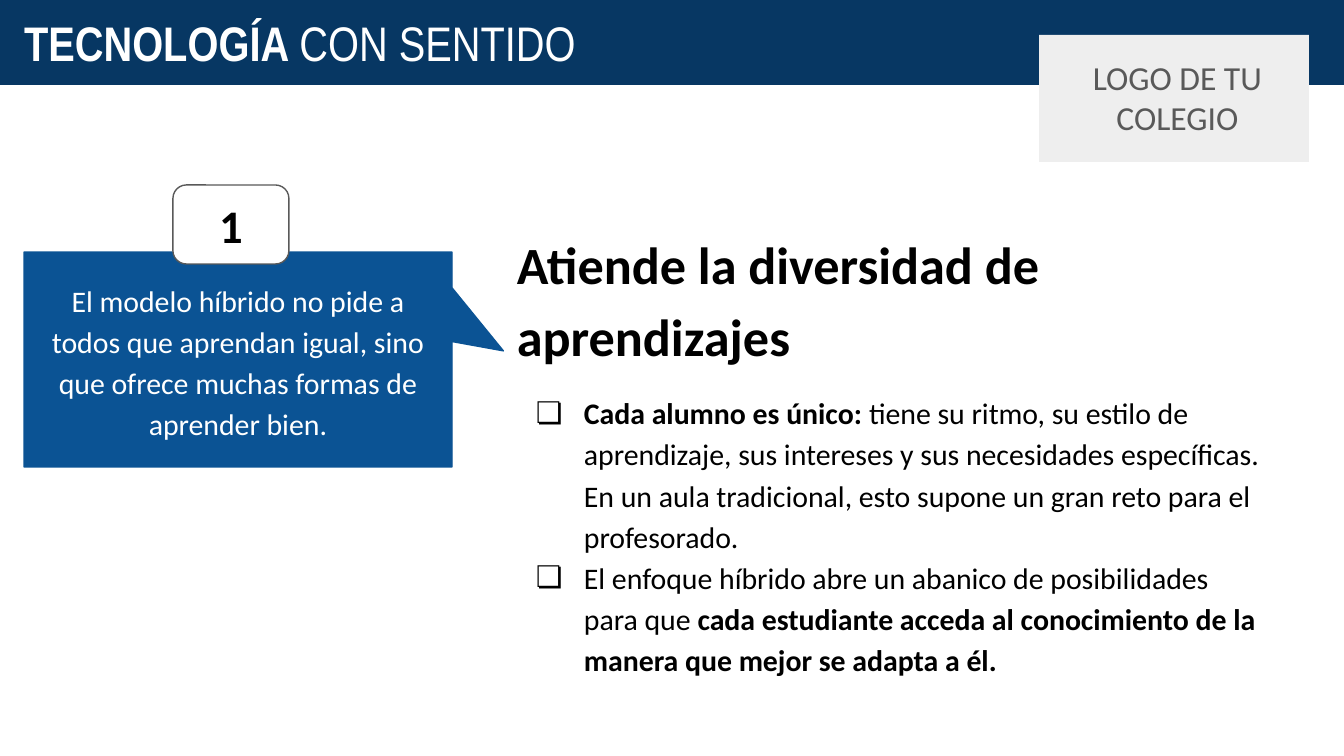
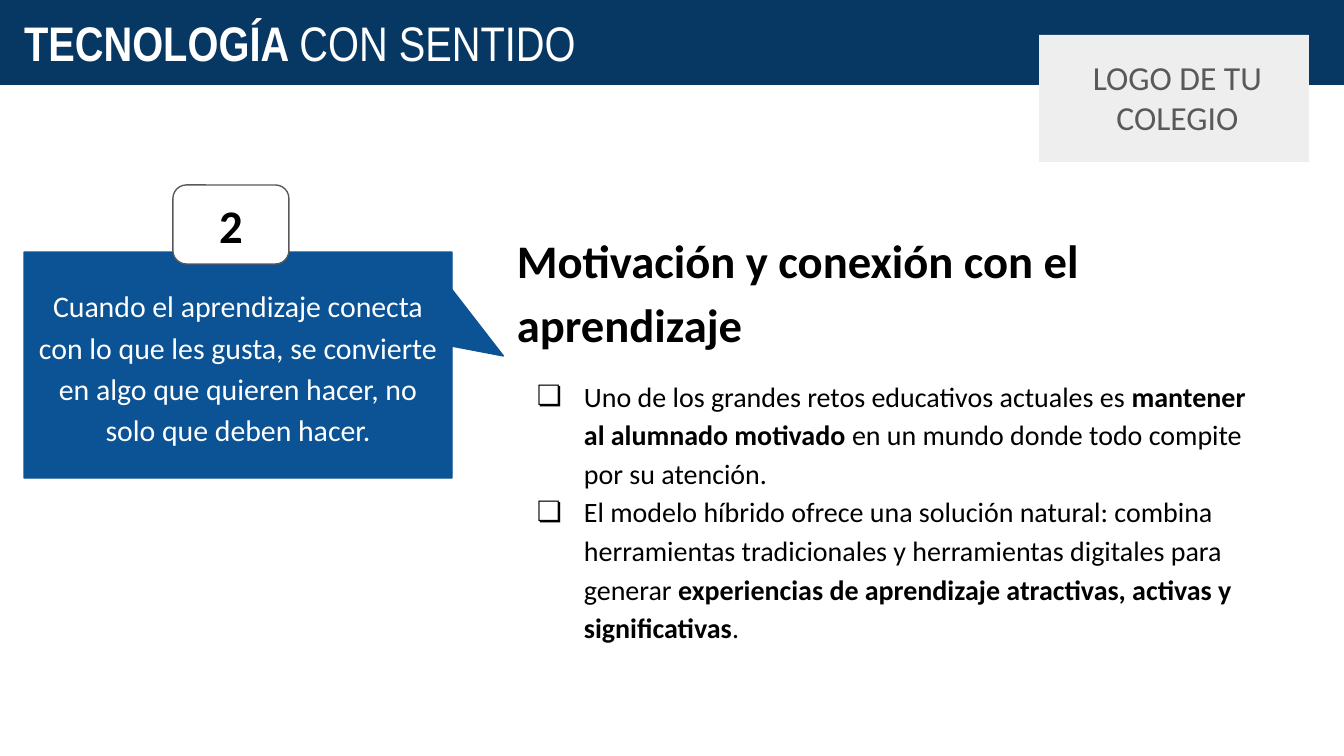
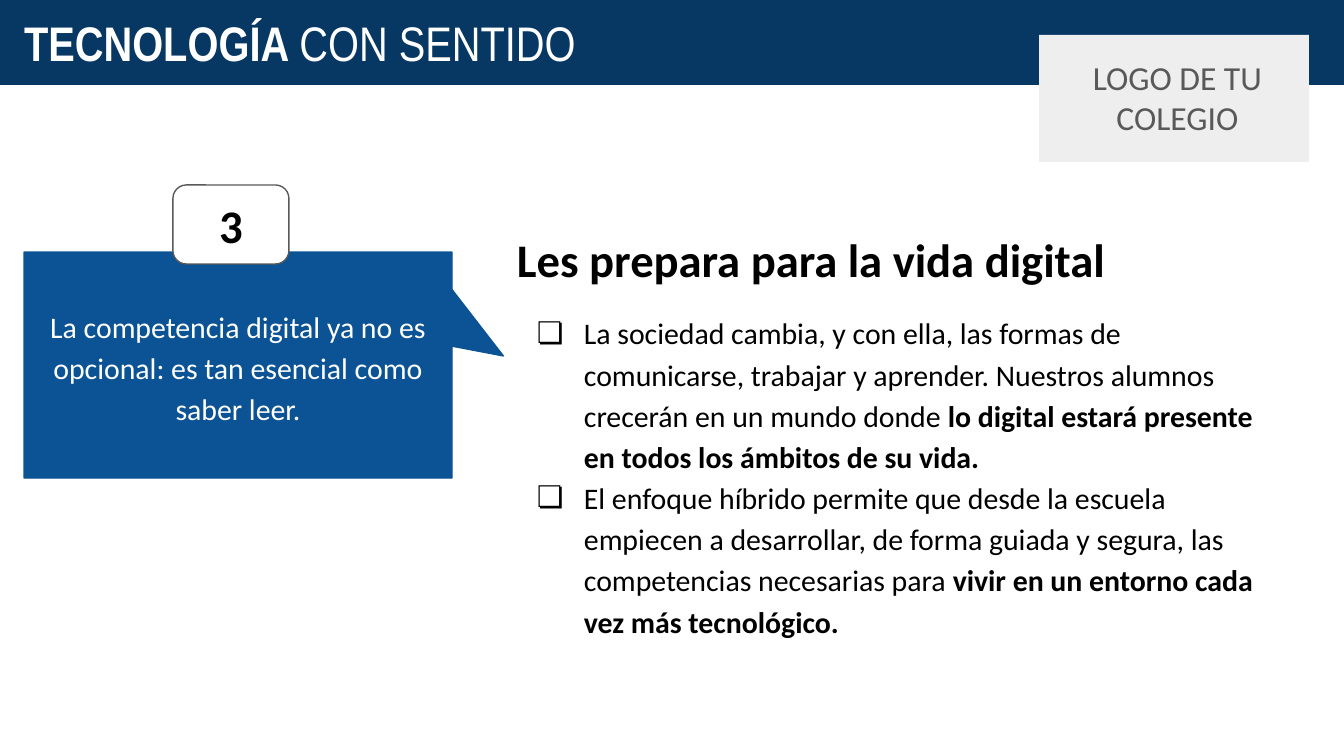
import lxml.etree
import pptx
import pptx.dml.color
import pptx.enum.shapes
import pptx.enum.text
import pptx.oxml.ns
import pptx.util

EMU_PER_PX = 914400 / 134.4
SHAPES = pptx.enum.shapes.MSO_SHAPE
ANCHOR = pptx.enum.text.MSO_ANCHOR
CENTER = pptx.enum.text.PP_ALIGN.CENTER
FIT = pptx.enum.text.MSO_AUTO_SIZE.SHAPE_TO_FIT_TEXT

COLORS = {
    "band": "073763",
    "callout": "0B5394",
    "logo": "EEEEEE",
    "gray": "595959",
    "white": "FFFFFF",
    "black": "000000",
}

REASONS = [
    {
        "quote": "El modelo híbrido no pide a todos que aprendan igual, sino que ofrece muchas formas de aprender bien.",
        "quote_height": 215,
        "heading": "Atiende la diversidad de aprendizajes",
        "heading_size": 28,
        "point_size": 16,
        "hanging": 48,
        "body_height": 481,
        "points": [
            [("Cada alumno es único:", True),
             (" tiene su ritmo, su estilo de aprendizaje, sus intereses y sus necesidades específicas. "
              "En un aula tradicional, esto supone un gran reto para el profesorado.", False)],
            [("El enfoque híbrido abre un abanico de posibilidades para que ", False),
             ("cada estudiante acceda al conocimiento de la manera que mejor se adapta a él.", True)],
        ],
    },
    {
        "quote": "Cuando el aprendizaje conecta con lo que les gusta, se convierte en algo que quieren hacer, "
                 "no solo que deben hacer.",
        "quote_height": 226,
        "heading": "Motivación y conexión con el aprendizaje",
        "heading_size": 25,
        "point_size": 15,
        "hanging": 47,
        "body_height": 448,
        "points": [
            [("Uno de los grandes retos educativos actuales es ", False),
             ("mantener al alumnado motivado", True),
             (" en un mundo donde todo compite por su atención.", False)],
            [("El modelo híbrido ofrece una solución natural: combina herramientas tradicionales "
              "y herramientas digitales para generar ", False),
             ("experiencias de aprendizaje atractivas, activas y significativas", True),
             (".", False)],
        ],
    },
    {
        "quote": "La competencia digital ya no es opcional: es tan esencial como saber leer.",
        "quote_height": 226,
        "heading": "Les prepara para la vida digital",
        "heading_size": 25,
        "point_size": 16,
        "hanging": 47,
        "body_height": 507,
        "points": [
            [("La sociedad cambia, y con ella, las formas de comunicarse, trabajar y aprender. "
              "Nuestros alumnos crecerán en un mundo donde ", False),
             ("lo digital estará presente en todos los ámbitos de su vida.", True)],
            [("El enfoque híbrido permite que desde la escuela empiecen a desarrollar, de forma guiada "
              "y segura, las competencias necesarias para ", False),
             ("vivir en un entorno cada vez más tecnológico.", True)],
        ],
    },
]


def px(length):
    return pptx.util.Emu(round(length * EMU_PER_PX))


def rgb(color):
    return pptx.dml.color.RGBColor.from_string(COLORS[color])


def apply_format(target, values):
    for attribute, value in values.items():
        setattr(target, attribute, value)


def format_frame(frame, **values):
    inset = px(13)
    apply_format(frame, {
        "word_wrap": True,
        "margin_left": inset,
        "margin_top": inset,
        "margin_right": inset,
        "margin_bottom": inset,
        **values,
    })


def write_runs(paragraph, runs, size, color, font="Calibri", **layout):
    apply_format(paragraph, layout)
    for text, bold in runs:
        run = paragraph.add_run()
        run.text = text
        apply_format(run.font, {"name": font, "size": pptx.util.Pt(size), "bold": bold})
        run.font.color.rgb = rgb(color)


def add_box(slide, kind, bounds, fill, line=None, line_width=0.75, adjustments=()):
    box = slide.shapes.add_shape(kind, *map(px, bounds))
    box.shadow.inherit = False
    box.fill.solid()
    box.fill.fore_color.rgb = rgb(fill)
    if line:
        box.line.color.rgb = rgb(line)
        box.line.width = pptx.util.Pt(line_width)
    else:
        box.line.fill.background()
    for index, value in enumerate(adjustments):
        box.adjustments[index] = value
    return box.text_frame


def add_text_area(slide, bounds, **values):
    frame = slide.shapes.add_textbox(*map(px, bounds)).text_frame
    format_frame(frame, **values)
    return frame


def add_bullet(paragraph, hanging):
    properties = paragraph._p.get_or_add_pPr()
    properties.set("marL", str(px(67)))
    properties.set("indent", str(-px(hanging)))
    qn = pptx.oxml.ns.qn
    bullet_color = lxml.etree.SubElement(properties, qn("a:buClr"))
    lxml.etree.SubElement(bullet_color, qn("a:srgbClr"), val=COLORS["black"])
    lxml.etree.SubElement(properties, qn("a:buFont"), typeface="Calibri")
    lxml.etree.SubElement(properties, qn("a:buChar"), char="❏")


def add_explanation(slide, reason):
    explanation = add_text_area(slide, (504, 210, 777, reason["body_height"]), auto_size=FIT)
    write_runs(explanation.paragraphs[0], [(reason["heading"], True)], reason["heading_size"], "black",
               line_spacing=1.15, space_before=pptx.util.Pt(14))
    for index, point in enumerate(reason["points"]):
        paragraph = explanation.add_paragraph()
        write_runs(paragraph, point, reason["point_size"], "black",
                   line_spacing=1.15, space_before=pptx.util.Pt(0 if index else 12))
        add_bullet(paragraph, reason["hanging"])


def add_quote(slide, reason):
    quote = add_box(slide, SHAPES.ROUNDED_RECTANGULAR_CALLOUT, (24, 252, 428, reason["quote_height"]),
                    "callout", "callout", adjustments=(0.62, -0.04, 0))
    format_frame(quote, vertical_anchor=ANCHOR.MIDDLE)
    write_runs(quote.paragraphs[0], [(reason["quote"], False)], 16, "white",
               alignment=CENTER, line_spacing=1.15, space_before=pptx.util.Pt(8))


def add_number(slide, number):
    badge = add_box(slide, SHAPES.ROUNDED_RECTANGLE, (173, 185, 116, 79), "white", "gray",
                    adjustments=(0.17,))
    format_frame(badge, vertical_anchor=ANCHOR.MIDDLE)
    write_runs(badge.paragraphs[0], [(str(number), True)], 25, "black", alignment=CENTER)


def add_header(slide):
    band = add_box(slide, SHAPES.RECTANGLE, (0, 0, 1344, 84), "band", "band", 1.5)
    format_frame(band, vertical_anchor=ANCHOR.BOTTOM)
    write_runs(band.paragraphs[0], [(" TECNOLOGÍA ", True), ("CON SENTIDO", False)], 26, "white",
               font="Arial Narrow", alignment=pptx.enum.text.PP_ALIGN.LEFT)
    add_box(slide, SHAPES.RECTANGLE, (1039, 35, 270, 127), "logo")
    logo = add_text_area(slide, (1046, 44, 263, 108))
    write_runs(logo.paragraphs[0], [("LOGO DE TU COLEGIO", False)], 18, "gray", alignment=CENTER)


def main():
    deck = pptx.Presentation()
    deck.slide_width = px(1344)
    deck.slide_height = px(756)
    for number, reason in enumerate(REASONS, 1):
        slide = deck.slides.add_slide(deck.slide_layouts[6])
        add_explanation(slide, reason)
        add_quote(slide, reason)
        add_number(slide, number)
        add_header(slide)
    deck.save("out.pptx")


if __name__ == "__main__":
    main()
